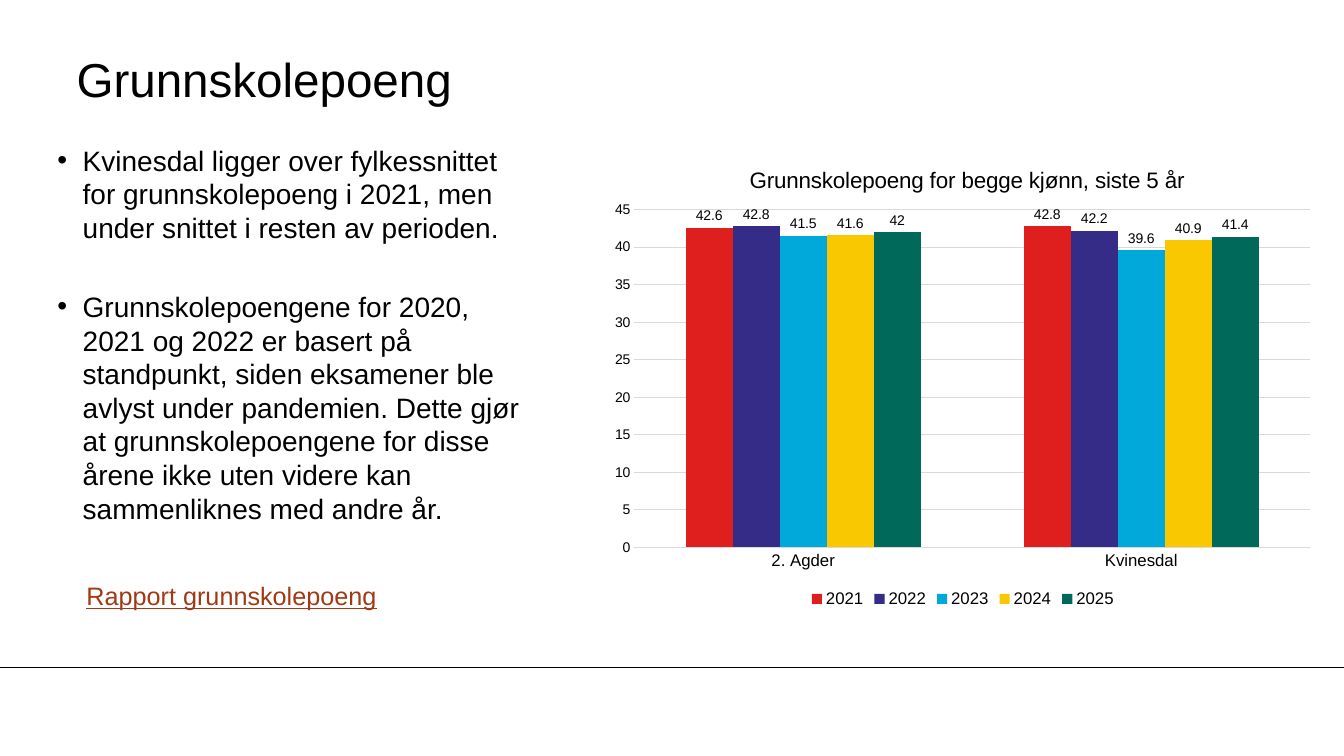
from dataclasses import dataclass

from lxml.etree import SubElement
from pptx import Presentation
from pptx.chart.data import CategoryChartData
from pptx.dml.color import RGBColor
from pptx.enum.chart import XL_CHART_TYPE as ChartType
from pptx.enum.chart import XL_LABEL_POSITION as LabelPosition
from pptx.enum.chart import XL_LEGEND_POSITION as LegendPosition
from pptx.enum.chart import XL_TICK_MARK as TickMark
from pptx.enum.text import MSO_ANCHOR as Anchor
from pptx.oxml import parse_xml
from pptx.oxml.ns import nsdecls, qn
from pptx.util import Inches, Pt

COLORS = {
    "text": "000000",
    "link": "9F3A14",
    "grid": "D9D9D9",
    "2021": "DF1F1D",
    "2022": "342C86",
    "2023": "00A9DA",
    "2024": "FAC800",
    "2025": "00695A",
}
FONT = "Arial"
SCHOOL_POINTS = {
    "2021": (42.6, 42.8),
    "2022": (42.8, 42.2),
    "2023": (41.5, 39.6),
    "2024": (41.6, 40.9),
    "2025": (42, 41.4),
}


@dataclass(frozen=True)
class TextBlock:
    left: float
    top: float
    width: float
    height: float
    paragraphs: tuple[str, ...]
    size: float
    color: str = "text"
    inset: tuple[float, float] = (0, 0)
    anchor: Anchor = Anchor.TOP
    bulleted: bool = False
    underline: bool = False


TEXT_BLOCKS = (
    TextBlock(0.76, 0.4, 11.1, 0.75, ("Grunnskolepoeng",), 34, anchor=Anchor.MIDDLE),
    TextBlock(
        0.57, 1.42, 4.72, 4.24,
        (
            "Kvinesdal ligger over fylkessnittet for grunnskolepoeng i 2021, "
            "men under snittet i resten av perioden.",
            "Grunnskolepoengene for 2020, 2021 og 2022 er basert på standpunkt, "
            "siden eksamener ble avlyst under pandemien. Dette gjør at "
            "grunnskolepoengene for disse årene ikke uten videre kan "
            "sammenliknes med andre år.",
        ),
        20, bulleted=True,
    ),
    TextBlock(
        0.76, 5.71, 3.3, 0.4, ("Rapport grunnskolepoeng",), 18,
        color="link", inset=(0.1, 0.05), underline=True,
    ),
)


def rgb(name: str) -> RGBColor:
    return RGBColor.from_string(COLORS[name])


def style_font(font, size: float, color: str = "text") -> None:
    font.name = FONT
    font.size = Pt(size)
    font.bold = False
    font.color.rgb = rgb(color)


def add_bullet(paragraph) -> None:
    properties = paragraph._p.get_or_add_pPr()
    properties.set("marL", str(Inches(0.25)))
    properties.set("indent", str(Inches(-0.25)))
    SubElement(properties, qn("a:buFont")).set("typeface", FONT)
    SubElement(properties, qn("a:buChar")).set("char", "•")


def add_text(slide, block: TextBlock) -> None:
    box = slide.shapes.add_textbox(
        Inches(block.left), Inches(block.top), Inches(block.width), Inches(block.height)
    )
    frame = box.text_frame
    frame.word_wrap = True
    frame.vertical_anchor = block.anchor
    frame.margin_left = frame.margin_right = Inches(block.inset[0])
    frame.margin_top = frame.margin_bottom = Inches(block.inset[1])
    frame.text = "\n".join(block.paragraphs)
    for index, paragraph in enumerate(frame.paragraphs):
        if block.bulleted:
            add_bullet(paragraph)
            paragraph.line_spacing = Pt(24)
        if index:
            paragraph.space_before = Pt(32.5)
        style_font(paragraph.font, block.size, block.color)
        if block.underline:
            paragraph.font.underline = True


def manual_layout(**values: str | float):
    entries = "".join(f'<c:{key} val="{value}"/>' for key, value in values.items())
    return parse_xml(
        f'<c:layout {nsdecls("c")}><c:manualLayout>{entries}</c:manualLayout></c:layout>'
    )


def place_title(title) -> None:
    element = title._element
    for old in element.findall(qn("c:layout")):
        element.remove(old)
    element.find(qn("c:tx")).addnext(
        manual_layout(xMode="edge", yMode="edge", x=0.2, y=0.04)
    )


def place_plot(chart) -> None:
    plot_area = chart._chartSpace.chart.plotArea
    for old in plot_area.findall(qn("c:layout")):
        plot_area.remove(old)
    plot_area.insert(0, manual_layout(
        layoutTarget="inner", xMode="edge", yMode="edge", x=0.046, y=0.142, w=0.934, h=0.721
    ))


def style_axis(axis, size: float) -> None:
    axis.major_tick_mark = axis.minor_tick_mark = TickMark.NONE
    style_font(axis.tick_labels.font, size)


def add_points_chart(slide) -> None:
    data = CategoryChartData()
    data.categories = ("2. Agder", "Kvinesdal")
    for year, points in SCHOOL_POINTS.items():
        data.add_series(year, points)
    chart = slide.shapes.add_chart(
        ChartType.COLUMN_CLUSTERED,
        Inches(5.96), Inches(1.42), Inches(7.18), Inches(4.65), data,
    ).chart
    style_font(chart.font, 10)

    chart.has_title = True
    heading = chart.chart_title.text_frame
    heading.text = "Grunnskolepoeng for begge kjønn, siste 5 år"
    style_font(heading.paragraphs[0].font, 16)
    place_title(chart.chart_title)
    place_plot(chart)

    chart.has_legend = True
    chart.legend.position = LegendPosition.BOTTOM
    chart.legend.include_in_layout = False
    style_font(chart.legend.font, 12)

    regions, scale = chart.category_axis, chart.value_axis
    style_axis(regions, 12)
    style_axis(scale, 10)
    scale.minimum_scale, scale.maximum_scale, scale.major_unit = 0, 45, 5
    scale.format.line.fill.background()
    for line in (regions.format.line, scale.major_gridlines.format.line):
        line.color.rgb = rgb("grid")
        line.width = Pt(0.75)

    plot = chart.plots[0]
    plot.gap_width = 219
    plot.overlap = 0
    plot.vary_by_categories = False
    for series in plot.series:
        series.format.fill.solid()
        series.format.fill.fore_color.rgb = rgb(series.name)
        series.invert_if_negative = False
        labels = series.data_labels
        labels.show_value = True
        labels.position = LabelPosition.OUTSIDE_END
        style_font(labels.font, 10)


def add_footer_rule(slide, width: int) -> None:
    rule = slide.shapes.add_connector(1, 0, Inches(6.62), width, Inches(6.62))
    rule.line.color.rgb = rgb("text")
    rule.line.width = Pt(0.75)
    SubElement(rule._element.spPr, qn("a:effectLst"))


def main() -> None:
    deck = Presentation()
    deck.slide_width, deck.slide_height = Inches(13.33), Inches(7.5)
    slide = deck.slides.add_slide(deck.slide_layouts[6])
    add_footer_rule(slide, deck.slide_width)
    for block in TEXT_BLOCKS:
        add_text(slide, block)
    add_points_chart(slide)
    deck.save("out.pptx")


if __name__ == "__main__":
    main()
